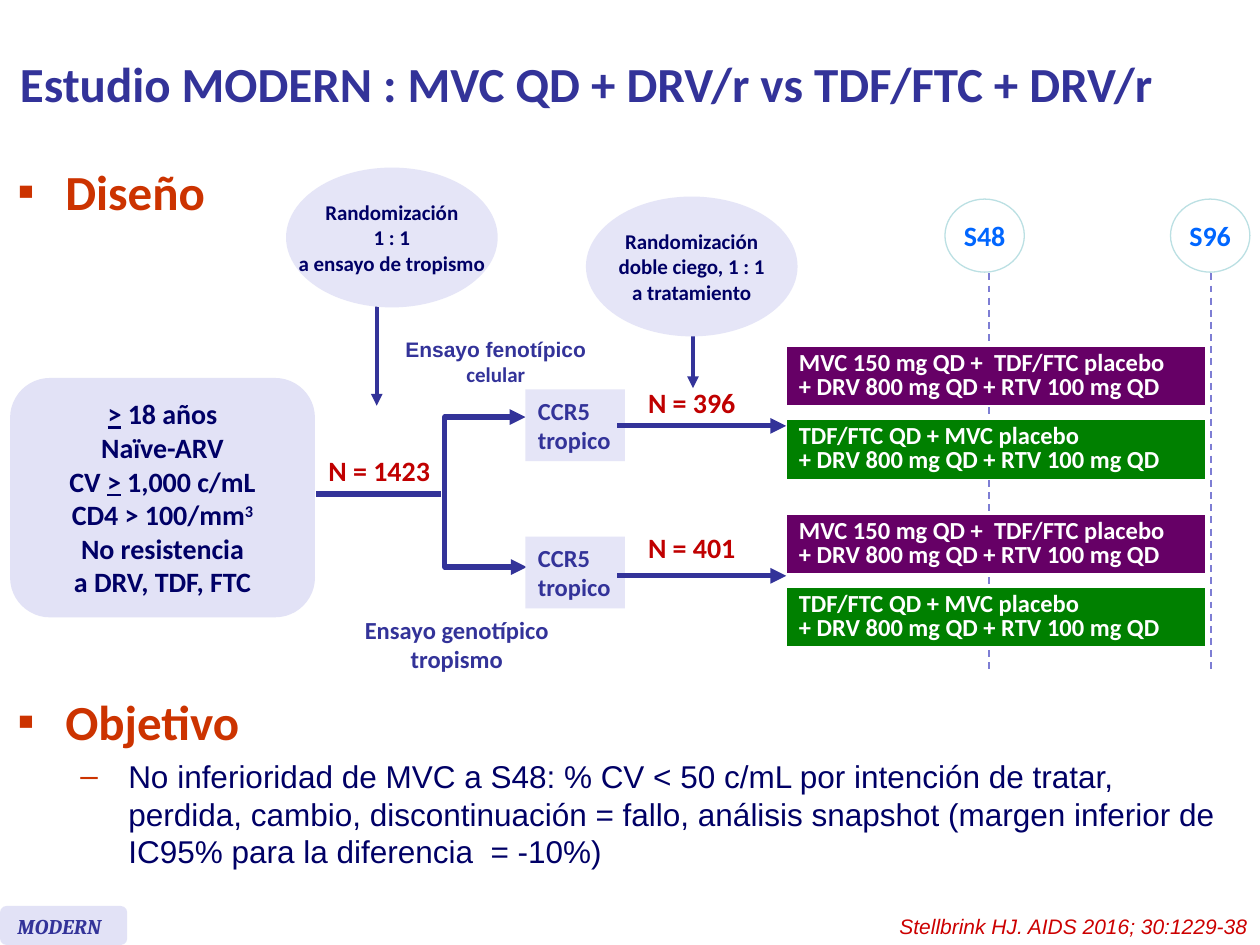
from dataclasses import dataclass, replace
from typing import NamedTuple, Optional

from lxml.etree import SubElement
from pptx import Presentation
from pptx.dml.color import RGBColor
from pptx.enum.dml import MSO_LINE
from pptx.enum.shapes import MSO_CONNECTOR, MSO_SHAPE
from pptx.enum.text import MSO_ANCHOR, PP_ALIGN
from pptx.oxml.ns import qn
from pptx.util import Inches, Pt

INDIGO = RGBColor(0x33, 0x33, 0x99)
NAVY = RGBColor(0x00, 0x00, 0x66)
ORANGE = RGBColor(0xCC, 0x33, 0x00)
RED = RGBColor(0xC0, 0x00, 0x00)
CITE_RED = RGBColor(0xCC, 0x00, 0x00)
BLUE = RGBColor(0x00, 0x66, 0xFF)
WHITE = RGBColor(0xFF, 0xFF, 0xFF)
PURPLE = RGBColor(0x66, 0x00, 0x66)
GREEN = RGBColor(0x00, 0x80, 0x00)
LAVENDER = RGBColor(0xE2, 0xE2, 0xF6)
PALE = RGBColor(0xE5, 0xE5, 0xF7)
DASH = RGBColor(0x7E, 0x7E, 0xD4)
RING = RGBColor(0xBB, 0xE0, 0xE3)


@dataclass(frozen=True)
class Style:
    size: float
    color: RGBColor
    font: str = "Calibri"
    bold: bool = True
    italic: bool = False


class Span(NamedTuple):
    text: str
    underline: bool = False
    superscript: bool = False
    style: Optional[Style] = None


class Box(NamedTuple):
    left: float
    top: float
    width: float
    height: float


class Arm(NamedTuple):
    top: float
    first: str
    color: RGBColor


class Branch(NamedTuple):
    box_top: float
    arrow_y: float
    label_top: float
    label: str


HEADING = Style(28, ORANGE)
COUNT = Style(16, RED)
ASSAY = Style(14, INDIGO)
BUBBLE = Style(12, NAVY)
VISIT = Style(16, BLUE)

ARMS = [
    Arm(top + step, first, color)
    for top in (2.75, 4.08)
    for step, first, color in (
        (0, "MVC 150 mg QD +  TDF/FTC placebo", PURPLE),
        (0.58, "TDF/FTC QD + MVC placebo", GREEN),
    )
]
BRANCHES = [Branch(3.09, 3.38, 3.01, "N = 396"), Branch(4.26, 4.57, 4.16, "N = 401")]
BUBBLES = [
    (Box(2.27, 1.33, 1.68, 1.11), ["Randomización", "1 : 1", "a ensayo de tropismo"]),
    (Box(4.65, 1.56, 1.68, 1.11), ["Randomización", "doble ciego, 1 : 1", "a tratamiento"]),
]
CRITERIA = [
    [Span(">", underline=True), Span(" 18 años")],
    "Naïve-ARV",
    [Span("CV "), Span(">", underline=True), Span(" 1,000 c/mL")],
    [Span("CD4 > 100/mm"), Span("3", superscript=True)],
    "No resistencia",
    "a DRV, TDF, FTC",
]


def add_run(p, span: Span, style: Style) -> None:
    """Append one styled run to a paragraph."""
    style = span.style or style
    r = p.add_run()
    r.text = span.text
    font = r.font
    font.name, font.size = style.font, Pt(style.size)
    font.bold, font.italic = style.bold, style.italic
    font.color.rgb = style.color
    if span.underline:
        font.underline = True
    if span.superscript:
        r._r.get_or_add_rPr().set("baseline", "30000")


def write(tf, paragraphs: list, style: Style, align=PP_ALIGN.LEFT,
          anchor=MSO_ANCHOR.TOP, wrap: bool = True) -> None:
    """Fill a text frame with paragraphs of plain strings or spans."""
    tf.word_wrap, tf.vertical_anchor = wrap, anchor
    for i, content in enumerate(paragraphs):
        p = tf.paragraphs[0] if i == 0 else tf.add_paragraph()
        p.alignment = align
        for span in [Span(content)] if isinstance(content, str) else content:
            add_run(p, span, style)


def add_text(s, box: Box, paragraphs: list, style: Style, **layout):
    """Add a text box and return its text frame."""
    tf = s.shapes.add_textbox(*map(Inches, box)).text_frame
    write(tf, paragraphs, style, **layout)
    return tf


def add_panel(s, kind, box: Box, fill: RGBColor, line: Optional[RGBColor] = None):
    """Add a flat filled shape and return its text frame."""
    sp = s.shapes.add_shape(kind, *map(Inches, box))
    sp.shadow.inherit = False
    sp.fill.solid()
    sp.fill.fore_color.rgb = fill
    if line is None:
        sp.line.fill.background()
    else:
        sp.line.color.rgb, sp.line.width = line, Pt(0.75)
    return sp.text_frame


def add_line(s, x1: float, y1: float, x2: float, y2: float, width: float = 3,
             color: RGBColor = INDIGO, ends: tuple = (), kind=MSO_CONNECTOR.STRAIGHT):
    """Add a connector with arrowheads at the named ends."""
    c = s.shapes.add_connector(kind, *map(Inches, (x1, y1, x2, y2)))
    c.line.color.rgb, c.line.width = color, Pt(width)
    ln = c.line._get_or_add_ln()
    for end in ends:
        SubElement(ln, qn(f"a:{end}")).set("type", "triangle")
    SubElement(c._element.spPr, qn("a:effectLst"))
    return c


def add_fork(s, x: float, top: float, bottom: float, reach: float) -> None:
    """Add a double-headed elbow that bulges left of its two ends."""
    gap = 0.01
    c = add_line(s, x + gap, bottom, x, top, ends=("headEnd", "tailEnd"),
                 kind=MSO_CONNECTOR.ELBOW)
    c._element.spPr.find(qn("a:xfrm")).set("rot", "10800000")
    guides = c._element.spPr.find(qn("a:prstGeom")).get_or_add_avLst()
    guide = SubElement(guides, qn("a:gd"))
    guide.set("name", "adj1")
    guide.set("fmla", f"val {round(-reach / gap * 100000)}")


def set_bullet(p, char: str, left: float) -> None:
    """Give a paragraph a hanging orange bullet."""
    pPr = p._p.get_or_add_pPr()
    pPr.set("marL", str(Inches(left)))
    pPr.set("indent", str(Inches(-0.38)))
    SubElement(SubElement(pPr, qn("a:buClr")), qn("a:srgbClr")).set("val", str(ORANGE))
    SubElement(pPr, qn("a:buFont")).set("typeface", "Arial")
    SubElement(pPr, qn("a:buChar")).set("char", char)


def add_arm(s, arm: Arm) -> None:
    """Add a one-cell table for a treatment arm."""
    box = Box(6.24, arm.top, 3.33, 0.47)
    cell = s.shapes.add_table(1, 1, *map(Inches, box)).table.cell(0, 0)
    cell.fill.solid()
    cell.fill.fore_color.rgb = arm.color
    cell.vertical_anchor = MSO_ANCHOR.MIDDLE
    p = cell.text_frame.paragraphs[0]
    p.line_spacing = 0.8
    style = Style(14, WHITE)
    add_run(p, Span(arm.first), style)
    p.add_line_break()
    add_run(p, Span("+ DRV 800 mg QD + RTV 100 mg QD"), style)


def main() -> None:
    """Build the study design slide."""
    prs = Presentation()
    prs.slide_width, prs.slide_height = Inches(10), Inches(7.5)
    s = prs.slides.add_slide(prs.slide_layouts[6])
    middle = {"align": PP_ALIGN.CENTER, "anchor": MSO_ANCHOR.MIDDLE}
    label = {"align": PP_ALIGN.CENTER, "wrap": False}

    add_text(s, Box(0.06, 0.05, 9.91, 1.21),
             ["Estudio MODERN : MVC QD + DRV/r vs TDF/FTC + DRV/r"],
             Style(28, INDIGO), anchor=MSO_ANCHOR.MIDDLE)
    design = add_text(s, Box(0.04, 1.23, 1.98, 0.63), ["Diseño"], HEADING)
    set_bullet(design.paragraphs[0], "▪", 0.38)
    goal_style = Style(18, NAVY, "Arial", bold=False)
    goal = add_text(s, Box(0.04, 5.44, 9.8, 1.7), ["Objetivo", [Span(
        "No inferioridad de MVC a S48: % CV < 50 c/mL por intención de tratar, "
        "perdida, cambio, discontinuación = fallo, análisis snapshot (margen inferior "
        "de IC95% para la diferencia  = -10%)", style=goal_style)]], HEADING)
    set_bullet(goal.paragraphs[0], "▪", 0.38)
    goal.paragraphs[1].level = 1
    goal.paragraphs[1].space_before = Pt(3.6)
    set_bullet(goal.paragraphs[1], "–", 0.88)

    for visit, left, x in (("S48", 7.5, 7.85), ("S96", 9.29, 9.61)):
        add_line(s, x, 2.17, x, 5.31, 1, DASH).line.dash_style = MSO_LINE.DASH
        ring = add_panel(s, MSO_SHAPE.OVAL, Box(left, 1.58, 0.63, 0.58), WHITE, RING)
        write(ring, [visit], VISIT, wrap=False, **middle)
    for arm in ARMS:
        add_arm(s, arm)

    add_line(s, 2.99, 2.42, 2.99, 3.22, 2.25, ends=("tailEnd",))
    add_line(s, 5.5, 2.67, 5.5, 3.08, 2.25, ends=("tailEnd",))
    for box, lines in BUBBLES:
        write(add_panel(s, MSO_SHAPE.OVAL, box, PALE), lines, BUBBLE, wrap=False, **middle)
    criteria = add_panel(s, MSO_SHAPE.ROUNDED_RECTANGLE, Box(0.08, 3, 2.42, 1.9), LAVENDER)
    write(criteria, CRITERIA, Style(16, NAVY), **middle)

    add_line(s, 2.51, 3.92, 3.5, 3.92)
    add_fork(s, 4.17, 3.31, 4.5, 0.65)
    add_text(s, Box(2.5, 3.55, 1.02, 0.37), ["N = 1423"], COUNT, **label)
    phenotype = Span("Ensayo fenotípico", style=Style(12, INDIGO, "Arial"))
    add_text(s, Box(3.11, 2.62, 1.65, 0.5), [[phenotype], "celular"],
             replace(ASSAY, size=12), **label)
    add_text(s, Box(2.78, 4.83, 1.69, 0.57), ["Ensayo genotípico", "tropismo"], ASSAY, **label)
    for b in BRANCHES:
        ccr5 = add_panel(s, MSO_SHAPE.RECTANGLE, Box(4.17, b.box_top, 0.79, 0.57), PALE)
        write(ccr5, ["CCR5", "tropico"], ASSAY, wrap=False)
        add_line(s, 4.9, b.arrow_y, 6.24, b.arrow_y, ends=("tailEnd",))
        add_text(s, Box(5.04, b.label_top, 0.9, 0.37), [b.label], COUNT, **label)

    add_panel(s, MSO_SHAPE.ROUNDED_RECTANGLE, Box(0, 7.19, 1.01, 0.31), LAVENDER)
    add_text(s, Box(0.04, 7.2, 0.94, 0.3), ["MODERN"], Style(12, INDIGO, "Cambria", italic=True))
    add_text(s, Box(6.62, 7.2, 3.38, 0.3), ["Stellbrink HJ. AIDS 2016; 30:1229-38"],
             Style(12, CITE_RED, "Arial", bold=False, italic=True), align=PP_ALIGN.RIGHT)
    prs.save("out.pptx")


if __name__ == "__main__":
    main()
